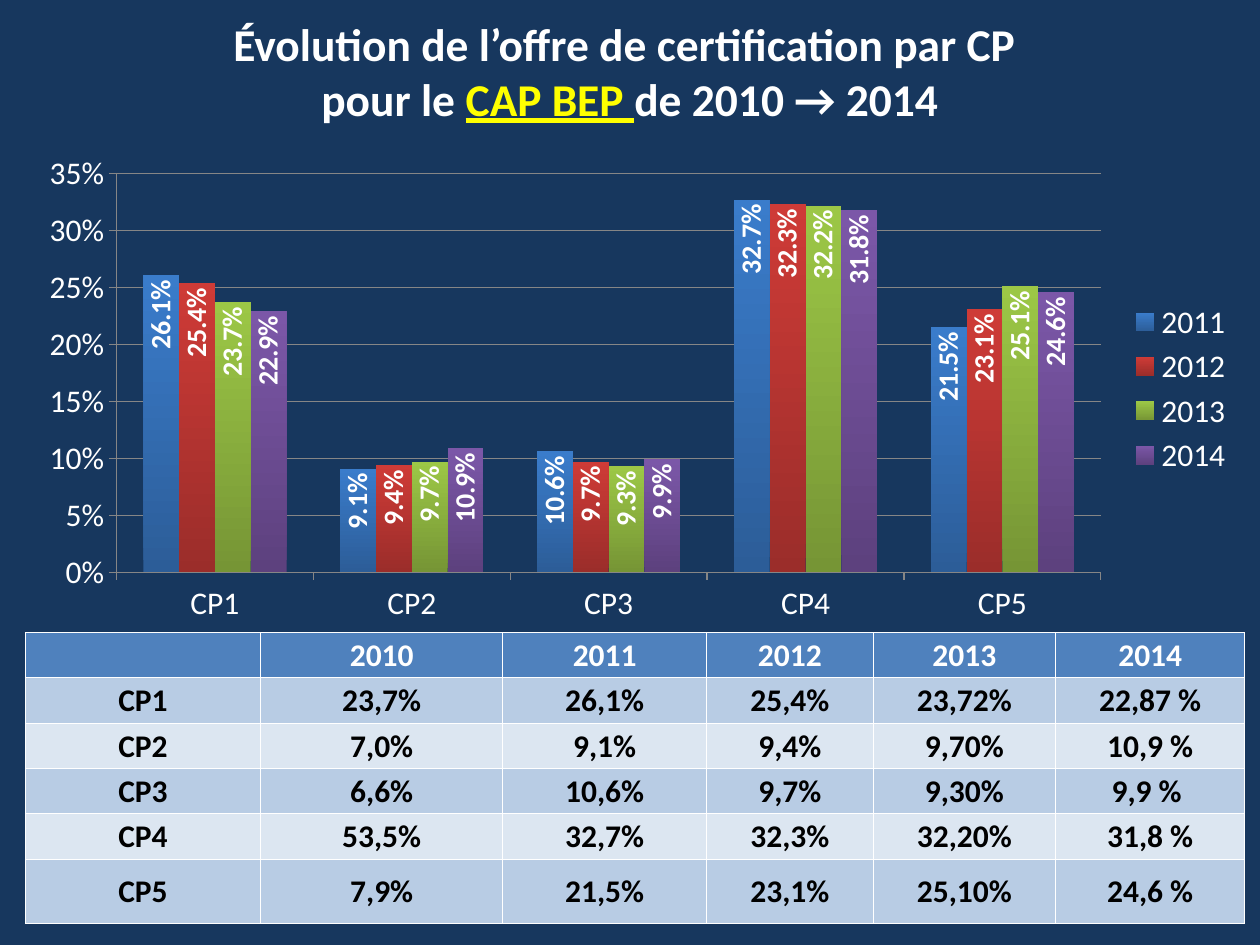
from dataclasses import dataclass

from lxml import etree
from pptx import Presentation
from pptx.chart.data import CategoryChartData
from pptx.dml.color import RGBColor
from pptx.enum.chart import XL_CHART_TYPE, XL_LABEL_POSITION, XL_LEGEND_POSITION, XL_TICK_MARK
from pptx.enum.text import MSO_ANCHOR, PP_ALIGN
from pptx.oxml.ns import qn
from pptx.util import Inches, Pt


@dataclass(frozen=True)
class Theme:
    font: str = "Calibri"
    background: str = "17375E"
    light: str = "FFFFFF"
    dark: str = "000000"
    accent: str = "FFFF00"
    grid: str = "868686"
    header: str = "4F81BD"
    bands: tuple = ("B8CCE4", "DCE6F1")
    # bottom and top colour of each year's columns
    columns: tuple = (("2C5D98", "3A7CCB"), ("9B2D2A", "CE3B37"),
                      ("769535", "9CC746"), ("5D417E", "7B57A8"))
    title_size: int = 26
    body_size: int = 18
    label_size: int = 16


TITLE_LINES = [
    [("Évolution de l’offre de certification par CP ", False)],
    [("pour le ", False), ("CAP BEP ", True), ("de 2010 → 2014", False)],
]
CATEGORIES = ["CP1", "CP2", "CP3", "CP4", "CP5"]
SHARES = {
    "2011": (0.261, 0.091, 0.106, 0.327, 0.215),
    "2012": (0.254, 0.094, 0.097, 0.323, 0.231),
    "2013": (0.237, 0.097, 0.093, 0.322, 0.251),
    "2014": (0.229, 0.109, 0.099, 0.318, 0.246),
}
TABLE_ROWS = [
    ["", "2010", "2011", "2012", "2013", "2014"],
    ["CP1", "23,7%", "26,1%", "25,4%", "23,72%", "22,87 %"],
    ["CP2", "7,0%", "9,1%", "9,4%", "9,70%", "10,9 %"],
    ["CP3", "6,6%", "10,6%", "9,7%", "9,30%", "9,9 % "],
    ["CP4", "53,5%", "32,7%", "32,3%", "32,20%", "31,8 %"],
    ["CP5", "7,9%", "21,5%", "23,1%", "25,10%", "24,6 %"],
]
COLUMN_WIDTHS = [1.87, 1.92, 1.62, 1.32, 1.45, 1.5]
ROW_HEIGHTS = [0.36] * 5 + [0.51]


class SlideBuilder:
    """Draws themed elements on the current slide."""

    def __init__(self, slide, theme):
        self.slide = slide
        self.theme = theme
        background = slide.background.fill
        background.solid()
        background.fore_color.rgb = RGBColor.from_string(theme.background)

    def style_font(self, font, size, color, bold=False):
        font.name = self.theme.font
        font.size = Pt(size)
        font.bold = bold
        font.color.rgb = RGBColor.from_string(color)

    def title(self, lines, left, top, width, height):
        """Fill the title from lines of (text, highlighted) pairs."""
        title = self.slide.shapes.title
        title.left, title.top = Inches(left), Inches(top)
        title.width, title.height = Inches(width), Inches(height)
        title.text_frame.vertical_anchor = MSO_ANCHOR.MIDDLE
        paragraph = title.text_frame.paragraphs[0]
        paragraph.alignment = PP_ALIGN.CENTER
        for index, line in enumerate(lines):
            if index:
                paragraph.add_line_break()
            for text, highlighted in line:
                run = paragraph.add_run()
                run.text = text
                color = self.theme.accent if highlighted else self.theme.light
                self.style_font(run.font, self.theme.title_size, color, bold=True)
                run.font.underline = highlighted

    def column_chart(self, categories, shares, left, top, width, height):
        theme = self.theme
        data = CategoryChartData(number_format="0.0%")
        data.categories = categories
        for year, values in shares.items():
            data.add_series(year, values)
        chart = self.slide.shapes.add_chart(
            XL_CHART_TYPE.COLUMN_CLUSTERED, Inches(left), Inches(top),
            Inches(width), Inches(height), data).chart
        self.style_font(chart.font, theme.body_size, theme.light)
        chart.has_title = False
        chart.has_legend = True
        chart.legend.position = XL_LEGEND_POSITION.RIGHT
        chart.legend.include_in_layout = False
        self.style_font(chart.legend.font, theme.body_size, theme.light)

        grid_color = RGBColor.from_string(theme.grid)
        for axis in (chart.category_axis, chart.value_axis):
            axis.major_tick_mark = XL_TICK_MARK.OUTSIDE
            axis.format.line.color.rgb = grid_color
            self.style_font(axis.tick_labels.font, theme.body_size, theme.light)
        values_axis = chart.value_axis
        values_axis.minimum_scale, values_axis.maximum_scale = 0, 0.35
        values_axis.major_unit = 0.05
        values_axis.tick_labels.number_format = "0%"
        values_axis.tick_labels.number_format_is_linked = False
        values_axis.major_gridlines.format.line.color.rgb = grid_color

        plot = chart.plots[0]
        plot.gap_width, plot.overlap = 150, 0
        plot.vary_by_categories = False
        for series, colors in zip(plot.series, theme.columns):
            fill = series.format.fill
            fill.gradient()
            fill.gradient_angle = 90
            for stop, color in zip(fill.gradient_stops, colors):
                stop.color.rgb = RGBColor.from_string(color)
            self.upright_labels(series.data_labels)

    def upright_labels(self, labels):
        """Show values inside the column tops, reading upwards."""
        labels.show_value = True
        labels.position = XL_LABEL_POSITION.INSIDE_END
        labels.number_format = "0.0%"
        labels.number_format_is_linked = False
        self.style_font(labels.font, self.theme.label_size, self.theme.light, bold=True)
        body = labels._element.find(".//" + qn("a:bodyPr"))
        body.set("rot", "-5400000")
        body.set("vert", "horz")

    def table(self, rows, widths, heights, left, top):
        theme = self.theme
        table = self.slide.shapes.add_table(
            len(rows), len(widths), Inches(left), Inches(top),
            Inches(sum(widths)), Inches(sum(heights))).table
        for column, width in zip(table.columns, widths):
            column.width = Inches(width)
        for index, (row, height, texts) in enumerate(zip(table.rows, heights, rows)):
            row.height = Inches(height)
            fill = theme.bands[(index - 1) % 2] if index else theme.header
            color = theme.dark if index else theme.light
            for cell, text in zip(row.cells, texts):
                self.table_cell(cell, text, fill, color)

    def table_cell(self, cell, text, fill, color):
        cell.margin_left = cell.margin_right = cell.margin_top = Inches(0.01)
        cell.margin_bottom = 0
        cell.vertical_anchor = MSO_ANCHOR.MIDDLE
        cell.text = text
        paragraph = cell.text_frame.paragraphs[0]
        paragraph.alignment = PP_ALIGN.CENTER
        self.style_font(paragraph.font, self.theme.body_size, color, bold=True)
        properties = cell._tc.get_or_add_tcPr()
        for side in ("a:lnL", "a:lnR", "a:lnT", "a:lnB"):
            border = etree.SubElement(properties, qn(side), w=str(Pt(0.5)))
            solid = etree.SubElement(border, qn("a:solidFill"))
            etree.SubElement(solid, qn("a:srgbClr"), val=self.theme.light)
        cell.fill.solid()
        cell.fill.fore_color.rgb = RGBColor.from_string(fill)


def main():
    presentation = Presentation()
    presentation.slide_width, presentation.slide_height = Inches(10), Inches(7.5)
    title_only = presentation.slide_layouts[5]
    builder = SlideBuilder(presentation.slides.add_slide(title_only), Theme())
    builder.title(TITLE_LINES, 0, 0.03, 10, 1.06)
    builder.column_chart(CATEGORIES, SHARES, 0.2, 1.15, 9.69, 3.87)
    builder.table(TABLE_ROWS, COLUMN_WIDTHS, ROW_HEIGHTS, 0.2, 5.02)
    presentation.save("out.pptx")


if __name__ == "__main__":
    main()
